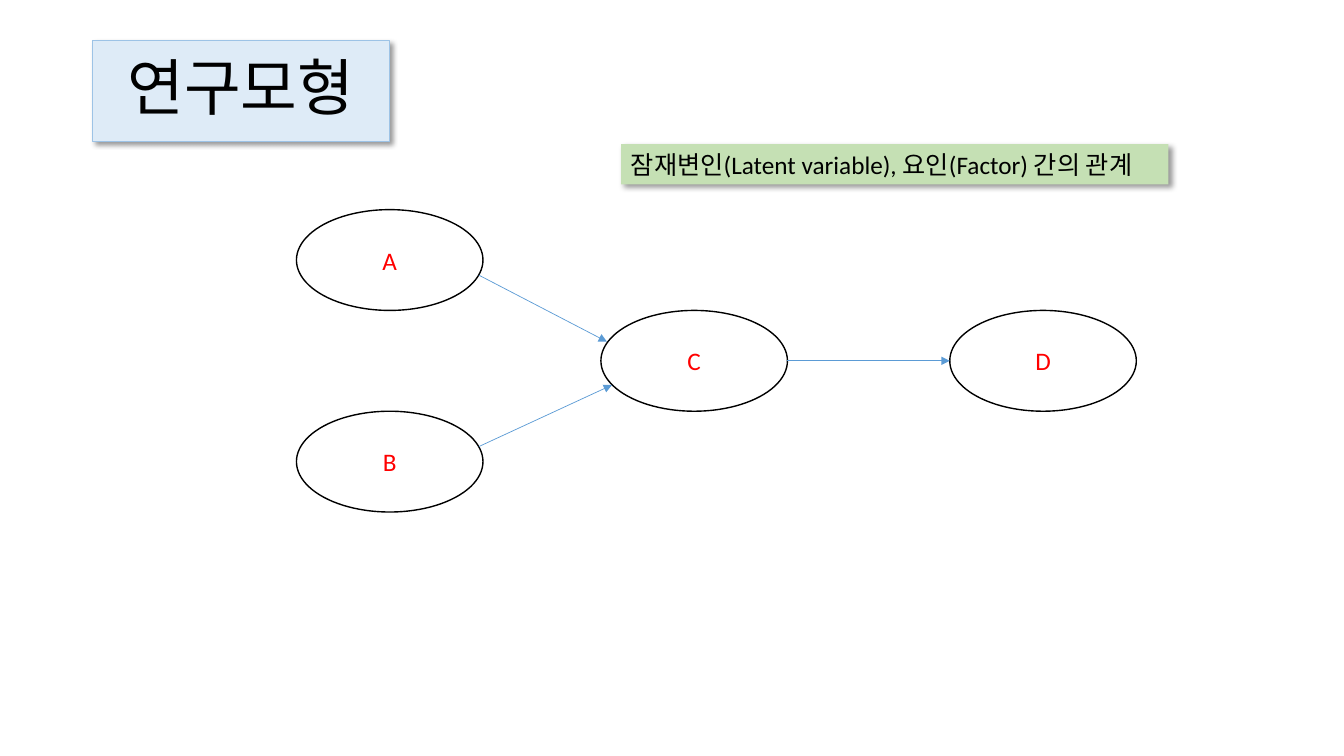
"""Build the research model slide: four latent variables and their paths."""
from lxml.etree import SubElement
from pptx import Presentation
from pptx.dml.color import RGBColor as RGB
from pptx.enum.shapes import MSO_CONNECTOR as Connector, MSO_SHAPE as Preset
from pptx.enum.text import MSO_ANCHOR as Anchor, MSO_AUTO_SIZE as AutoSize, PP_ALIGN as Align
from pptx.oxml.ns import qn
from pptx.util import Inches, Pt

TITLE = ("연구모형", (0.92, 0.4, 2.94, 1))
CAPTION = ("잠재변인(Latent variable), 요인(Factor) 간의 관계", (6.16, 1.43, 5.43, 0.4))
FACTORS = {"A": (2.94, 2.08), "B": (2.94, 4.08), "C": (5.96, 3.08), "D": (9.42, 3.08)}
FACTOR_SIZE = (1.85, 1)
PATHS = [
    ((4.75, 2.73), (6.02, 3.39)),
    ((4.75, 4.43), (6.07, 3.82)),
    ((7.81, 3.58), (9.42, 3.58)),
]

THEME = {
    "font": "Calibri",
    "title_size": 44,
    "body_size": 18,
    "text": "000000",
    "factor_text": "FF0000",
    "factor_line": "000000",
    "title_fill": "DEEBF7",
    "title_line": "9DC3E6",
    "caption_fill": "C5E0B4",
    "path": "5B9BD5",
    "shadow": "000000",
}


def color(role):
    return RGB.from_string(THEME[role])


def add_block(slide, preset, box, text, size, text_role, fill=None, line=None, width=0):
    block = slide.shapes.add_shape(preset, *map(Inches, box))
    block.shadow.inherit = False
    if fill:
        block.fill.solid()
        block.fill.fore_color.rgb = color(fill)
    else:
        block.fill.background()
    if line:
        block.line.color.rgb = color(line)
        block.line.width = Pt(width)
    else:
        block.line.fill.background()
    block.text_frame.vertical_anchor = Anchor.MIDDLE
    paragraph = block.text_frame.paragraphs[0]
    paragraph.text = text
    paragraph.alignment = Align.CENTER
    paragraph.font.name = THEME["font"]
    paragraph.font.size = Pt(THEME[size])
    paragraph.font.color.rgb = color(text_role)
    return block


def add_shadow(block):
    effects = block.element.spPr.find(qn("a:effectLst"))
    shadow = SubElement(effects, qn("a:outerShdw"), blurRad=str(Pt(4)), dist=str(Pt(3)),
                        dir="2700000", algn="tl", rotWithShape="0")
    tint = SubElement(shadow, qn("a:srgbClr"), val=THEME["shadow"])
    SubElement(tint, qn("a:alpha"), val="40000")


def add_path(slide, start, end):
    path = slide.shapes.add_connector(Connector.STRAIGHT, *map(Inches, start + end))
    path.line.color.rgb = color("path")
    path.line.width = Pt(0.5)
    properties = path.element.spPr
    SubElement(properties.find(qn("a:ln")), qn("a:tailEnd"), type="triangle")
    SubElement(properties, qn("a:effectLst"))


def main():
    deck = Presentation()
    deck.slide_width, deck.slide_height = Inches(13.33), Inches(7.5)
    slide = deck.slides.add_slide(deck.slide_layouts[6])

    text, box = TITLE
    title = add_block(slide, Preset.RECTANGLE, box, text, "title_size", "text",
                      "title_fill", "title_line", 0.75)
    title.text_frame.paragraphs[0].line_spacing = 0.9
    add_shadow(title)

    for name, corner in FACTORS.items():
        add_block(slide, Preset.OVAL, corner + FACTOR_SIZE, name, "body_size",
                  "factor_text", line="factor_line", width=1)
    for start, end in PATHS:
        add_path(slide, start, end)

    text, box = CAPTION
    caption = add_block(slide, Preset.RECTANGLE, box, text, "body_size", "text", "caption_fill")
    caption.text_frame.word_wrap = False
    caption.text_frame.auto_size = AutoSize.SHAPE_TO_FIT_TEXT
    caption.text_frame.vertical_anchor = Anchor.TOP
    caption.text_frame.paragraphs[0].alignment = Align.LEFT
    add_shadow(caption)

    deck.save("out.pptx")


if __name__ == "__main__":
    main()
